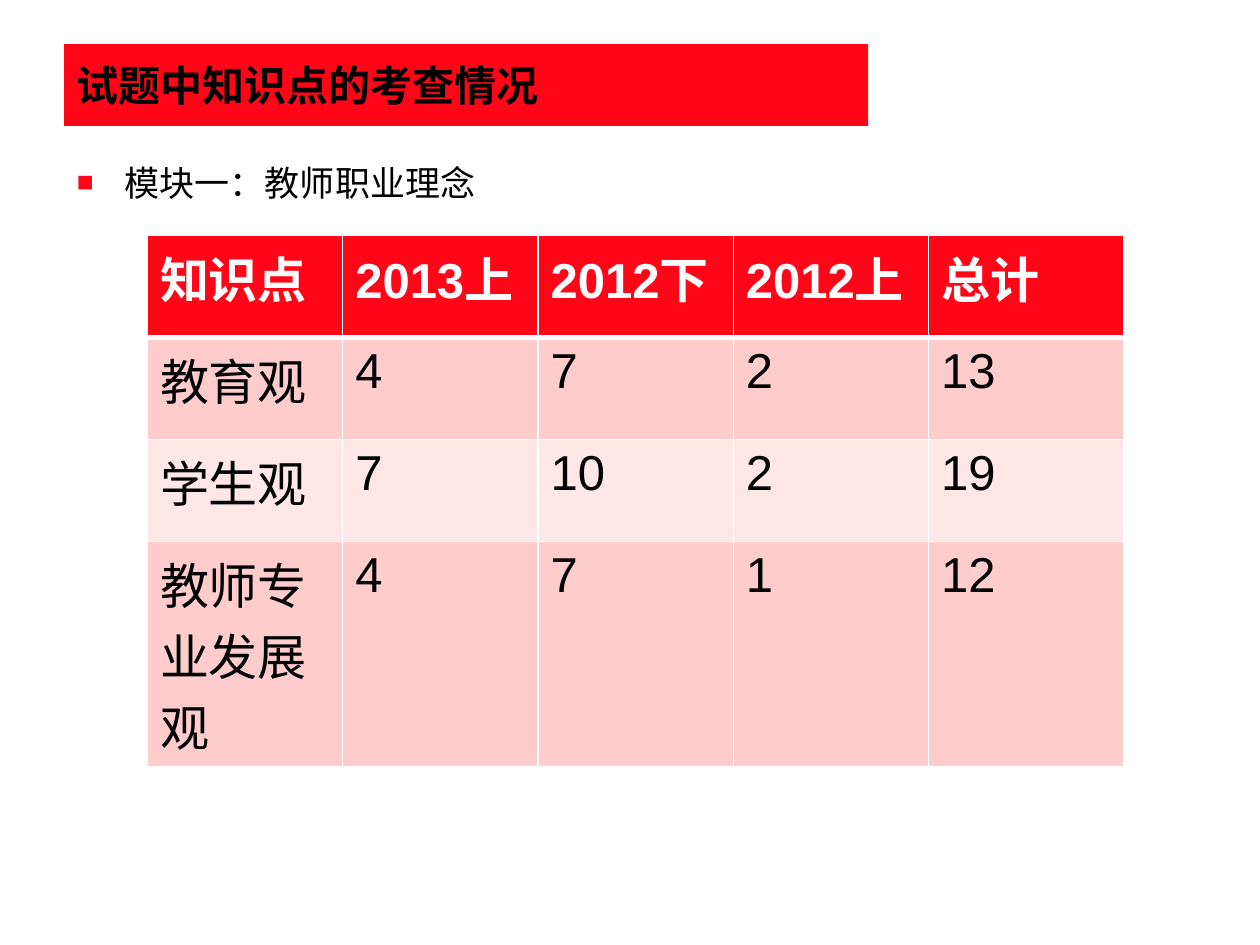
from lxml.etree import SubElement
from pptx import Presentation
from pptx.dml.color import RGBColor
from pptx.enum.text import MSO_ANCHOR as Anchor, MSO_AUTO_SIZE as AutoSize, PP_ALIGN as Align
from pptx.oxml.ns import qn
from pptx.util import Inches, Pt

RED, PINK, PALE, WHITE, BLACK = "FF0517", "FFCCCC", "FFE7E8", "FFFFFF", "000000"
ROWS = [
    ["知识点", "2013上", "2012下", "2012上", "总计"],
    ["教育观", "4", "7", "2", "13"],
    ["学生观", "7", "10", "2", "19"],
    ["教师专业发展观", "4", "7", "1", "12"],
]
ROW_HEIGHTS = [0.81, 0.81, 0.81, 1.39]
COL_WIDTH = 1.55


def rgb(value):
    """Turn a hex string into a colour."""
    return RGBColor.from_string(value)


def fill(target, color):
    """Give a shape or cell a solid fill."""
    target.fill.solid()
    target.fill.fore_color.rgb = rgb(color)


def write(tf, text, size, color=BLACK, bold=False):
    """Put one formatted run in a text frame and return its paragraph."""
    p = tf.paragraphs[0]
    r = p.add_run()
    r.text = text
    for name, value in {"name": "Arial", "size": Pt(size), "bold": bold}.items():
        setattr(r.font, name, value)
    r.font.color.rgb = rgb(color)
    return p


def place(sp, left, top, width, height, anchor):
    """Move a placeholder and set up its text frame."""
    box = {"left": left, "top": top, "width": width, "height": height}
    for name, value in box.items():
        setattr(sp, name, Inches(value))
    tf = sp.text_frame
    frame = {"word_wrap": True, "auto_size": AutoSize.NONE, "vertical_anchor": anchor}
    for name, value in frame.items():
        setattr(tf, name, value)
    return tf


def add_title(s, text):
    """Fill the title placeholder as a red banner."""
    sp = s.shapes.title
    tf = place(sp, 0.51, 0.35, 6.38, 0.65, Anchor.MIDDLE)
    fill(sp, RED)
    write(tf, text, 24, bold=True).alignment = Align.LEFT


def add_bullet(s, text):
    """Fill the body placeholder with one square-bulleted line."""
    tf = place(s.placeholders[1], 0.51, 1.23, 8.98, 5.47, Anchor.TOP)
    p = write(tf, text, 20)
    p.space_before = Pt(0)
    pPr = p._p.get_or_add_pPr()
    pPr.set("marL", str(Inches(0.38)))
    pPr.set("indent", str(Inches(-0.38)))
    SubElement(SubElement(pPr, qn("a:buClr")), qn("a:srgbClr"), val=RED)
    SubElement(pPr, qn("a:buSzPct"), val="80000")
    SubElement(pPr, qn("a:buFont"), typeface="Arial")
    SubElement(pPr, qn("a:buChar"), char="■")


def set_borders(cell, widths):
    """Draw white cell borders with a width in points per side."""
    tcPr = cell._tc.get_or_add_tcPr()
    for side, width in widths.items():
        ln = SubElement(tcPr, qn(f"a:ln{side}"), w=str(Pt(width)))
        SubElement(SubElement(ln, qn("a:solidFill")), qn("a:srgbClr"), val=WHITE)


def add_score_table(s):
    """Add the table of question counts per exam."""
    n_rows, n_cols = len(ROWS), len(ROWS[0])
    table = s.shapes.add_table(
        n_rows, n_cols, Inches(1.17), Inches(1.87),
        Inches(COL_WIDTH * n_cols), Inches(sum(ROW_HEIGHTS))).table
    for col in table.columns:
        col.width = Inches(COL_WIDTH)
    for i, (row, height) in enumerate(zip(ROWS, ROW_HEIGHTS)):
        table.rows[i].height = Inches(height)
        header = i == 0
        color = RED if header else PINK if i % 2 else PALE
        widths = {"L": 1, "R": 1, "T": 3 if i == 1 else 1, "B": 3 if header else 1}
        for j, text in enumerate(row):
            cell = table.cell(i, j)
            set_borders(cell, widths)
            fill(cell, color)
            write(cell.text_frame, text, 28, WHITE if header else BLACK, header)


def main():
    """Build and save the slide."""
    prs = Presentation()
    prs.slide_width, prs.slide_height = Inches(10), Inches(7.5)
    s = prs.slides.add_slide(prs.slide_layouts[1])
    add_title(s, "试题中知识点的考查情况")
    add_bullet(s, "模块一：教师职业理念")
    add_score_table(s)
    prs.save("out.pptx")


if __name__ == "__main__":
    main()
